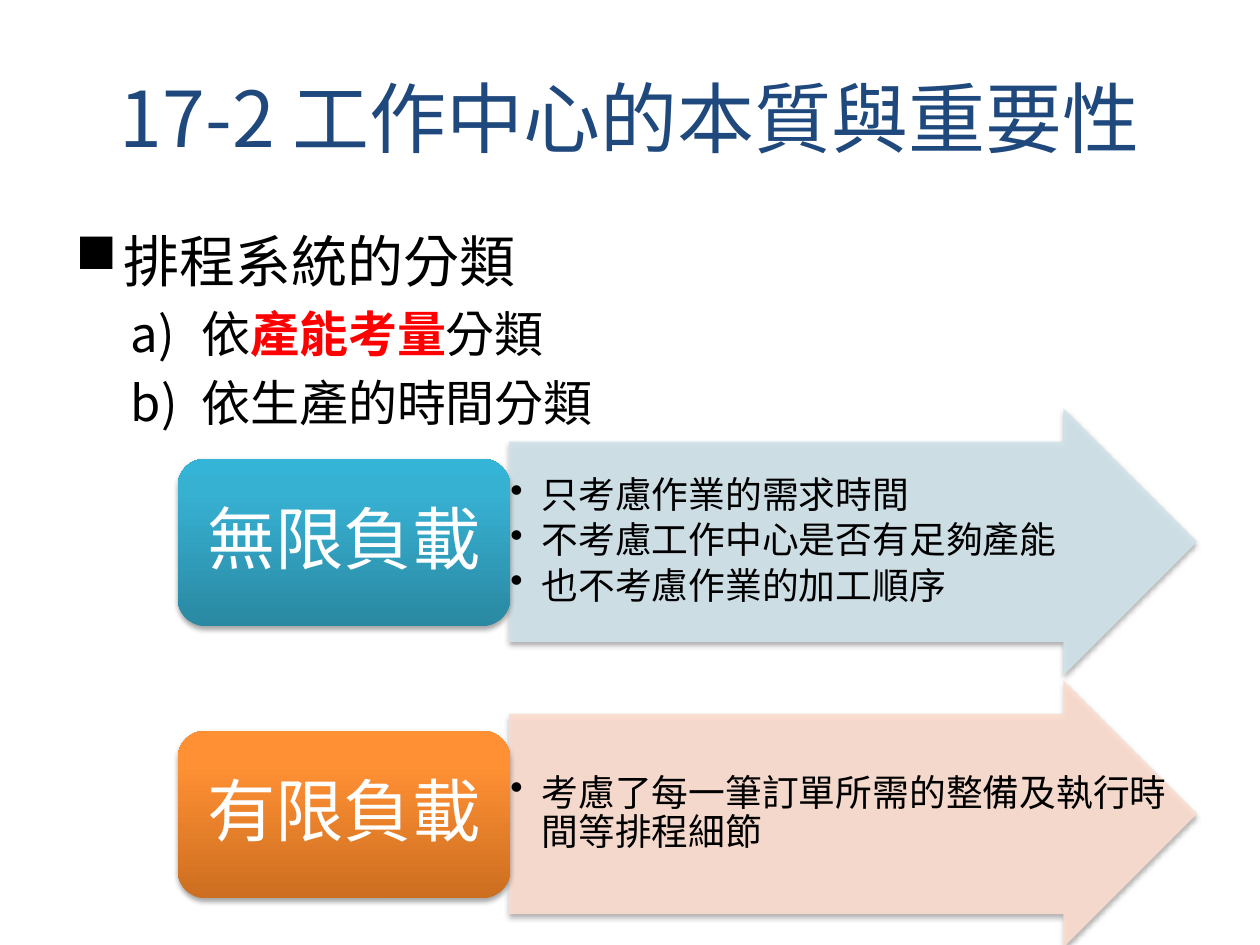
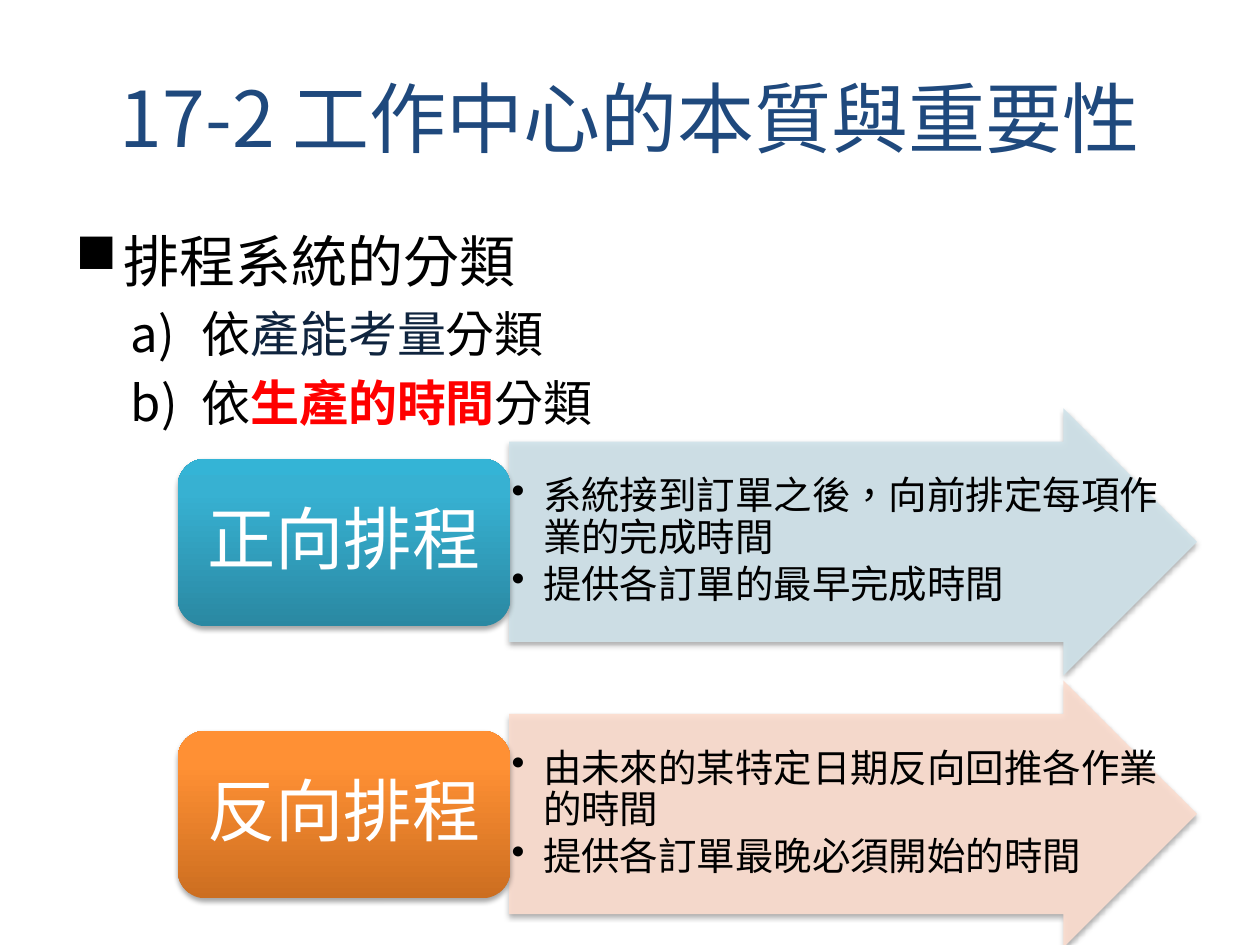
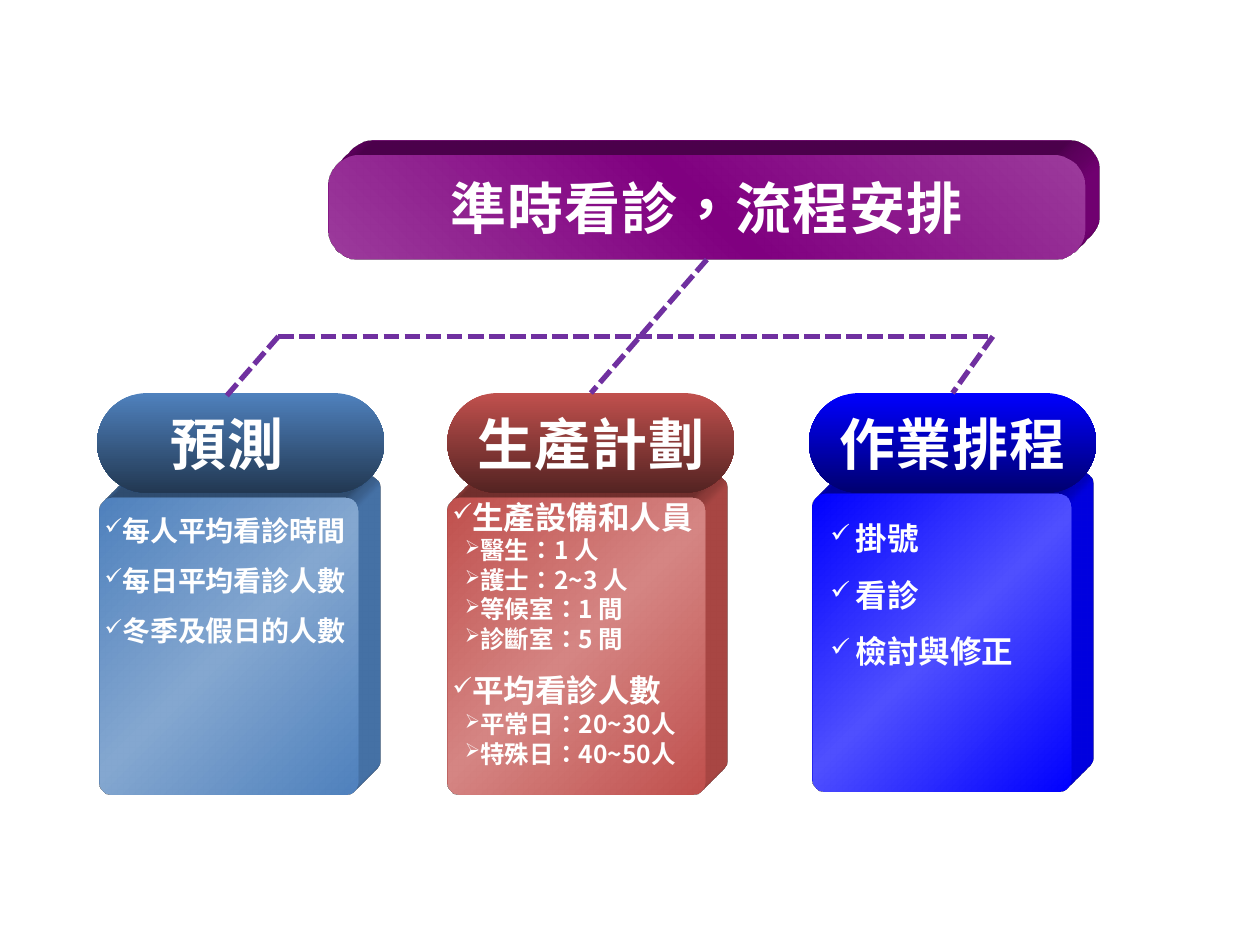
from pptx import Presentation
from pptx.dml.color import RGBColor
from pptx.enum.dml import MSO_LINE
from pptx.enum.lang import MSO_LANGUAGE_ID
from pptx.enum.shapes import MSO_CONNECTOR, MSO_SHAPE
from pptx.enum.text import MSO_ANCHOR, PP_ALIGN
from pptx.oxml import parse_xml
from pptx.oxml.ns import nsdecls, qn
from pptx.util import Inches, Pt

FONT = "Noto Sans CJK SC"
NAVY = RGBColor(0x1F, 0x49, 0x7D)
DARK_BLUE = RGBColor(0x0F, 0x24, 0x3E)
BLACK = RGBColor(0, 0, 0)
WHITE = RGBColor(0xFF, 0xFF, 0xFF)
RED = RGBColor(0xFF, 0, 0)
VIOLET = RGBColor(0x70, 0x30, 0xA0)
PURPLE = RGBColor(0x80, 0, 0x80)
LIGHT_PURPLE = RGBColor(0x9C, 0x3B, 0x9C)
PALE_TEAL = RGBColor(0xD0, 0xE3, 0xEA)
PALE_ORANGE = RGBColor(0xFC, 0xDD, 0xCF)
TEAL_STOPS = [(0, RGBColor(0x2A, 0x88, 0xA2)), (80, RGBColor(0x37, 0xB1, 0xD2)),
              (100, RGBColor(0x34, 0xB4, 0xD6))]
ORANGE_STOPS = [(0, RGBColor(0xCC, 0x6E, 0x20)), (80, RGBColor(0xFF, 0x90, 0x34)),
                (100, RGBColor(0xFF, 0x91, 0x36))]
# Column colours: base, light middle of the panel, dark foot of the heading
BLUE_SET = [RGBColor(0x4F, 0x81, 0xBD), RGBColor(0x84, 0xA7, 0xD0), RGBColor(0x22, 0x38, 0x52)]
BRICK_SET = [RGBColor(0xC0, 0x50, 0x4D), RGBColor(0xD5, 0x85, 0x83), RGBColor(0x54, 0x23, 0x22)]
PURE_BLUE_SET = [RGBColor(0, 0, 0xFF), RGBColor(0x4F, 0x4F, 0xFF), RGBColor(0, 0, 0x70)]


def write_text(shape, paragraphs, margins=(0.1, 0.05), anchor=MSO_ANCHOR.TOP, wrap=True):
    """Each paragraph is a list of (text, font format) runs and a paragraph format."""
    frame = shape.text_frame
    across, down = (Inches(margin) for margin in margins)
    frame_format = {"word_wrap": wrap, "vertical_anchor": anchor, "margin_left": across,
                    "margin_right": across, "margin_top": down, "margin_bottom": down}
    for name, value in frame_format.items():
        setattr(frame, name, value)
    for index, (runs, layout) in enumerate(paragraphs):
        paragraph = frame.paragraphs[0] if index == 0 else frame.add_paragraph()
        for name in ("alignment", "line_spacing", "space_before", "space_after"):
            if name in layout:
                setattr(paragraph, name, layout[name])
        if "bullet" in layout:
            properties = paragraph._p.get_or_add_pPr()
            left, first = layout["indent"]
            properties.set("marL", str(Inches(left)))
            properties.set("indent", str(Inches(first)))
            size = layout.get("bullet_size", 100)
            properties.append(parse_xml(f'<a:buSzPct {nsdecls("a")} val="{size * 1000}"/>'))
            properties.append(parse_xml(f'<a:{layout["bullet"]} {nsdecls("a")}/>'))
        for text, font_format in runs:
            run = paragraph.add_run()
            run.text = text
            run.font.name = FONT
            run.font.language_id = MSO_LANGUAGE_ID.TRADITIONAL_CHINESE
            for name, value in font_format.items():
                if name == "color":
                    run.font.color.rgb = value
                elif name == "spacing":
                    run._r.get_or_add_rPr().set("spc", str(value))
                else:
                    setattr(run.font, name, value)
            run._r.rPr.find(qn("a:latin")).addnext(
                parse_xml(f'<a:ea {nsdecls("a")} typeface="{FONT}"/>'))


def add_form(slide, kind, box, stops, angle=0, adjustments=(), shadow=False, depth=0):
    """A borderless preset shape; one stop is a solid fill, more make a gradient."""
    shape = slide.shapes.add_shape(kind, *(Inches(length) for length in box))
    for index, value in enumerate(adjustments):
        shape.adjustments[index] = value
    shape.line.fill.background()
    shape.shadow.inherit = False
    properties = shape._element.spPr
    if len(stops) == 1:
        shape.fill.solid()
        shape.fill.fore_color.rgb = stops[0][1]
        properties.find(qn("a:solidFill"))[0].append(
            parse_xml(f'<a:alpha {nsdecls("a")} val="90000"/>'))
    else:
        shape.fill.gradient()
        gradient = properties.find(qn("a:gradFill"))
        stop_xml = "".join(f'<a:gs pos="{position * 1000}"><a:srgbClr val="{color}"/></a:gs>'
                           for position, color in stops)
        gradient.replace(gradient.find(qn("a:gsLst")),
                         parse_xml(f'<a:gsLst {nsdecls("a")}>{stop_xml}</a:gsLst>'))
        gradient.find(qn("a:lin")).set("ang", str(angle * 60000))
    if shadow:
        properties.find(qn("a:effectLst")).append(parse_xml(
            f'<a:outerShdw {nsdecls("a")} blurRad="{Pt(3.1)}" dist="{Pt(1.8)}" dir="5400000" '
            'rotWithShape="0"><a:srgbClr val="000000"><a:alpha val="35000"/></a:srgbClr>'
            '</a:outerShdw>'))
    if depth:
        color = stops[len(stops) // 2][1] if angle == 315 else stops[0][1]
        properties.append(parse_xml(
            f'<a:scene3d {nsdecls("a")}><a:camera prst="legacyObliqueTopRight"/>'
            '<a:lightRig rig="legacyFlat3" dir="b"/></a:scene3d>'))
        properties.append(parse_xml(
            f'<a:sp3d {nsdecls("a")} extrusionH="{Pt(depth)}" prstMaterial="legacyMatte">'
            f'<a:extrusionClr><a:srgbClr val="{color}"/></a:extrusionClr></a:sp3d>'))
    return shape


presentation = Presentation()
presentation.slide_width, presentation.slide_height = Inches(10), Inches(7.5)
blank = presentation.slide_layouts[6]

# Shared text formats
centred = {"alignment": PP_ALIGN.CENTER}
title_font = {"size": Pt(44), "color": NAVY}
topic_font = {"size": Pt(32), "color": BLACK}
item_font = {"size": Pt(28), "color": BLACK}
key_font = {**item_font, "color": RED, "bold": True}
label_font = {"size": Pt(39), "color": WHITE}
heading_font = {"size": Pt(32), "color": WHITE, "bold": True, "spacing": 50}
topic_layout = {"indent": (0.38, -0.38), "bullet": 'buChar char="■"', "space_before": Pt(6.4)}
item_layout = {"indent": (1, -0.56), "bullet": 'buAutoNum type="alphaLcParenR"',
               "space_before": Pt(5.6)}
detail_layout = {"indent": (0.25, -0.25), "bullet": 'buChar char="•"',
                 "line_spacing": 0.9, "space_after": Pt(3.2)}

# Slides 1 and 2: the two ways to classify scheduling systems
classifications = [
    ([[("依", item_font), ("產能考量", key_font), ("分類", item_font)],
      [("依生產的時間分類", item_font)]],
     21, 0.01,
     [("無限負載", ["只考慮作業的需求時間", "不考慮工作中心是否有足夠產能", "也不考慮作業的加工順序"]),
      ("有限負載", ["考慮了每一筆訂單所需的整備及執行時間等排程細節"])]),
    ([[("依", item_font), ("產能考量", {**item_font, "color": DARK_BLUE}), ("分類", item_font)],
      [("依", item_font), ("生產的時間", key_font), ("分類", item_font)]],
     22, 0.02,
     [("正向排程", ["系統接到訂單之後，向前排定每項作業的完成時間", "提供各訂單的最早完成時間"]),
      ("反向排程", ["由未來的某特定日期反向回推各作業的時間", "提供各訂單最晚必須開始的時間"])]),
]
row_colors = [(PALE_TEAL, TEAL_STOPS), (PALE_ORANGE, ORANGE_STOPS)]
first_row, row_pitch = 3.24, 2.16

for items, detail_size, detail_margin, rows in classifications:
    slide = presentation.slides.add_slide(blank)
    title = slide.shapes.add_textbox(Inches(0.5), Inches(0.3), Inches(9), Inches(1.25))
    write_text(title, [([("17-2 工作中心的本質與重要性", title_font)], centred)],
               anchor=MSO_ANCHOR.MIDDLE)
    body = slide.shapes.add_textbox(Inches(0.5), Inches(1.75), Inches(9), Inches(4.95))
    write_text(body, [([("排程系統的分類", topic_font)], topic_layout)]
               + [(runs, item_layout) for runs in items])
    # One label and one arrow per row
    for row, ((label, details), (pale, stops)) in enumerate(zip(rows, row_colors)):
        top = first_row + row * row_pitch
        arrow_box = (4.04, top, 5.46, 2.12)
        add_form(slide, MSO_SHAPE.RIGHT_ARROW, arrow_box, [(0, pale)],
                 adjustments=(0.75, 0.5), shadow=True)
        detail_text = slide.shapes.add_textbox(*(Inches(length) for length in arrow_box))
        detail_font = {"size": Pt(detail_size), "color": BLACK}
        write_text(detail_text, [([(detail, detail_font)], detail_layout) for detail in details],
                   (detail_margin, detail_margin), MSO_ANCHOR.MIDDLE)
        label_shape = add_form(slide, MSO_SHAPE.ROUNDED_RECTANGLE, (1.41, top + 0.4, 2.64, 1.33),
                               stops, 270, shadow=True)
        write_text(label_shape, [([(label, label_font)], {**centred, "line_spacing": 0.9})],
                   (0.08, 0.08), MSO_ANCHOR.MIDDLE)

# Slide 3: goal at the top, three columns below
slide = presentation.slides.add_slide(blank)
goal = add_form(slide, MSO_SHAPE.ROUNDED_RECTANGLE, (2.61, 1.23, 6, 0.83),
                [(0, LIGHT_PURPLE), (50, PURPLE), (100, LIGHT_PURPLE)], 315, (0.29,), depth=24)
write_text(goal, [([("準時看診，流程安排", heading_font)], centred)],
           anchor=MSO_ANCHOR.MIDDLE, wrap=False)

small, medium, large = ({"size": Pt(size), "color": WHITE, "bold": True} for size in (14, 16, 18))
check = {"bullet": 'buChar char="✓"', "bullet_size": 80, "indent": (0.1, -0.1)}
spaced_check = {**check, "line_spacing": 1.5}
wide_check = {**spaced_check, "indent": (0.3, -0.2)}
later_check = {**check, "line_spacing": Pt(20), "space_before": Pt(12)}
sub_item = {**check, "bullet": 'buChar char="➢"', "indent": (0.2, -0.1)}

# Heading, heading left, heading right margin, panel place, text top and margin, colours, lines
columns = [
    ("預測", 0.77, 0.22, (0.79, 3.95), 3.94, 0, BLUE_SET,
     [(text, medium, spaced_check)
      for text in ("每人平均看診時間", "每日平均看診人數", "冬季及假日的人數")]),
    ("生產計劃", 3.55, 0, (3.55, 3.95), 3.91, 0.04, BRICK_SET,
     [("生產設備和人員", large, check)]
     + [(text, small, sub_item)
        for text in ("醫生：1 人", "護士：2~3 人", "等候室：1 間", "診斷室：5 間")]
     + [("平均看診人數", large, later_check)]
     + [(text, small, sub_item) for text in ("平常日：20~30人", "特殊日：40~50人")]),
    ("作業排程", 6.42, 0, (6.45, 3.92), 3.93, 0.04, PURE_BLUE_SET,
     [(text, large, wide_check) for text in ("掛號", "看診", "檢討與修正")]),
]
headings = []
for name, left, right_margin, (panel_left, panel_top), text_top, margin, colors, lines in columns:
    base, light, dark = colors
    add_form(slide, MSO_SHAPE.ROUNDED_RECTANGLE, (panel_left, panel_top, 2.05, 2.36),
             [(0, base), (50, light), (100, base)], 45, (0.05,), depth=36)
    panel_text = slide.shapes.add_textbox(Inches(panel_left), Inches(text_top),
                                          Inches(2.05), Inches(2.36))
    write_text(panel_text, [([(text, font)], layout) for text, font, layout in lines],
               (0.04, margin))
    heading = add_form(slide, MSO_SHAPE.ROUNDED_RECTANGLE, (left, 3.12, 2.28, 0.79),
                       [(0, base), (100, dark)], 90, (0.5,))
    write_text(heading, [([(name, heading_font)], centred)], (0, 0), MSO_ANCHOR.MIDDLE)
    heading.text_frame.margin_right = Inches(right_margin)
    headings.append(heading)

# Dashed branches from the goal to the columns
branches = [((2.21, 2.67), (7.88, 2.67)), ((2.21, 2.67), (1.8, 3.14)),
            ((5.61, 2.06), (4.69, 3.12)), ((7.88, 2.67), (7.56, 3.12))]
connectors = []
for start, end in branches:
    connector = slide.shapes.add_connector(MSO_CONNECTOR.STRAIGHT,
                                           *(Inches(length) for length in start + end))
    connector.line.color.rgb = VIOLET
    connector.line.width = Pt(3)
    connector.line.dash_style = MSO_LINE.SQUARE_DOT
    connector._element.spPr.append(parse_xml(f'<a:effectLst {nsdecls("a")}/>'))
    connectors.append(connector)
connectors[2].begin_connect(goal, 2)
connectors[2].end_connect(headings[1], 0)
connectors[3].end_connect(headings[2], 0)

presentation.save("out.pptx")
